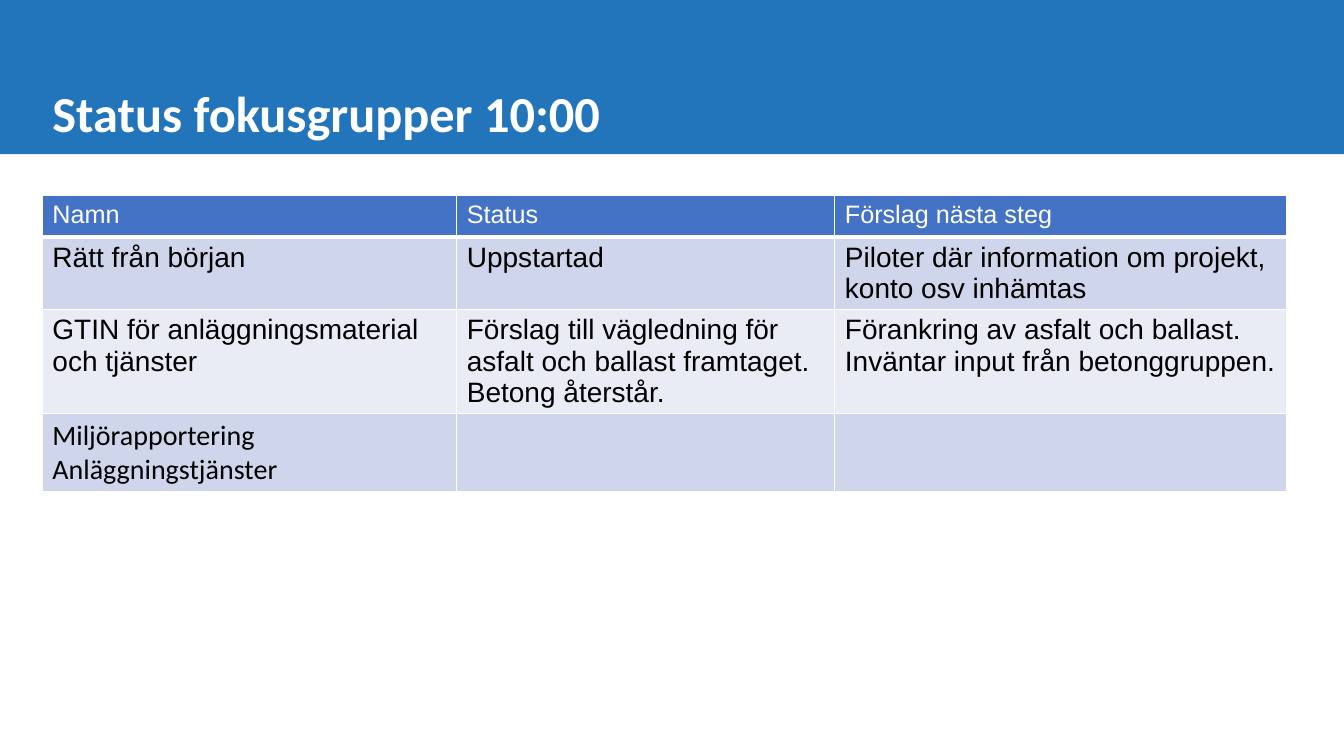
import dataclasses
import typing

import lxml.etree
import pptx
import pptx.dml.color
import pptx.enum.shapes
import pptx.enum.text
import pptx.oxml.ns
import pptx.util

Inches = pptx.util.Inches
Pt = pptx.util.Pt
RGB = pptx.dml.color.RGBColor.from_string


@dataclasses.dataclass(frozen=True)
class Theme:
    band: str = "2375BB"
    header: str = "4472C4"
    odd_row: str = "CFD5EA"
    even_row: str = "E9EBF5"
    light: str = "FFFFFF"
    dark: str = "000000"
    heading_font: str = "Calibri"
    table_font: str = "Arial"
    title_size: int = 36
    header_size: int = 18
    body_size: int = 20
    rule: int = 1
    heavy_rule: int = 3


@dataclasses.dataclass(frozen=True)
class Row:
    height: float
    texts: tuple[str, str, str]
    font: str = Theme.table_font


THEME = Theme()
SLIDE_WIDTH, SLIDE_HEIGHT = 13.33, 7.5
LEFT = 0.42
TABLE_TOP = 1.94
COLUMN_WIDTHS = (4.11, 3.75, 4.48)
ROWS = (
    Row(0.41, ("Namn", "Status", "Förslag nästa steg")),
    Row(0.72, ("Rätt från början", "Uppstartad",
               "Piloter där information om projekt, konto osv inhämtas")),
    Row(1.03, ("GTIN för anläggningsmaterial och tjänster",
               "Förslag till vägledning för asfalt och ballast framtaget.\nBetong återstår.",
               "Förankring av asfalt och ballast.\nInväntar input från betonggruppen.")),
    Row(0.78, ("Miljörapportering Anläggningstjänster", "", ""), THEME.heading_font),
)


def apply(target: typing.Any, values: dict[str, typing.Any]) -> None:
    """Set each named attribute of the target."""
    for name, value in values.items():
        setattr(target, name, value)


def style_font(font: typing.Any, name: str, size: int, color: str, bold: bool = False) -> None:
    apply(font, {"name": name, "size": Pt(size), "bold": bold})
    font.color.rgb = RGB(color)


def add_title(page: typing.Any, text: str) -> None:
    title = page.shapes.title
    apply(title, {"left": Inches(LEFT), "top": Inches(0.22),
                  "width": Inches(12.46), "height": Inches(1.2)})
    frame = title.text_frame
    frame.text = text
    apply(frame, {"word_wrap": True,
                  "auto_size": pptx.enum.text.MSO_AUTO_SIZE.NONE,
                  "vertical_anchor": pptx.enum.text.MSO_ANCHOR.BOTTOM,
                  "margin_left": Inches(0.1), "margin_right": Inches(0.1),
                  "margin_top": Inches(0.05), "margin_bottom": 0})
    para = frame.paragraphs[0]
    apply(para, {"alignment": pptx.enum.text.PP_ALIGN.LEFT, "line_spacing": 0.9})
    style_font(para.font, THEME.heading_font, THEME.title_size, THEME.light, True)


def add_band(page: typing.Any) -> None:
    """Draw the coloured band behind the title."""
    band = page.shapes.add_shape(pptx.enum.shapes.MSO_SHAPE.RECTANGLE,
                                 0, 0, Inches(SLIDE_WIDTH), Inches(1.53))
    band.shadow.inherit = False
    band.fill.solid()
    band.fill.fore_color.rgb = RGB(THEME.band)
    band.line.fill.background()
    page.shapes.title.element.addprevious(band.element)


def set_borders(cell: typing.Any, top: int, bottom: int) -> None:
    properties = cell._tc.get_or_add_tcPr()
    widths = {"L": THEME.rule, "R": THEME.rule, "T": top, "B": bottom}
    for side, width in widths.items():
        line = lxml.etree.SubElement(properties, pptx.oxml.ns.qn(f"a:ln{side}"), w=str(Pt(width)))
        fill = lxml.etree.SubElement(line, pptx.oxml.ns.qn("a:solidFill"))
        lxml.etree.SubElement(fill, pptx.oxml.ns.qn("a:srgbClr"), val=THEME.light)


def fill_row(table: typing.Any, index: int, row: Row) -> None:
    is_header = index == 0
    banding = THEME.odd_row if index % 2 else THEME.even_row
    fill = THEME.header if is_header else banding
    size = THEME.header_size if is_header else THEME.body_size
    color = THEME.light if is_header else THEME.dark
    table.rows[index].height = Inches(row.height)
    for column, text in enumerate(row.texts):
        cell = table.cell(index, column)
        set_borders(cell,
                    top=THEME.heavy_rule if index == 1 else THEME.rule,
                    bottom=THEME.heavy_rule if is_header else THEME.rule)
        cell.fill.solid()
        cell.fill.fore_color.rgb = RGB(fill)
        cell.text = text
        for para in cell.text_frame.paragraphs:
            style_font(para.font, row.font, size, color)


def add_status_table(page: typing.Any) -> None:
    frame = page.shapes.add_table(
        len(ROWS), len(COLUMN_WIDTHS), Inches(LEFT), Inches(TABLE_TOP),
        Inches(sum(COLUMN_WIDTHS)), Inches(sum(row.height for row in ROWS)))
    table = frame.table
    table.horz_banding = False
    table.first_row = False
    for column, width in zip(table.columns, COLUMN_WIDTHS):
        column.width = Inches(width)
    for index, row in enumerate(ROWS):
        fill_row(table, index, row)


def main() -> None:
    deck = pptx.Presentation()
    apply(deck, {"slide_width": Inches(SLIDE_WIDTH), "slide_height": Inches(SLIDE_HEIGHT)})
    page = deck.slides.add_slide(deck.slide_layouts.get_by_name("Title Only"))
    add_title(page, "Status fokusgrupper 10:00")
    add_band(page)
    add_status_table(page)
    deck.save("out.pptx")


if __name__ == "__main__":
    main()
